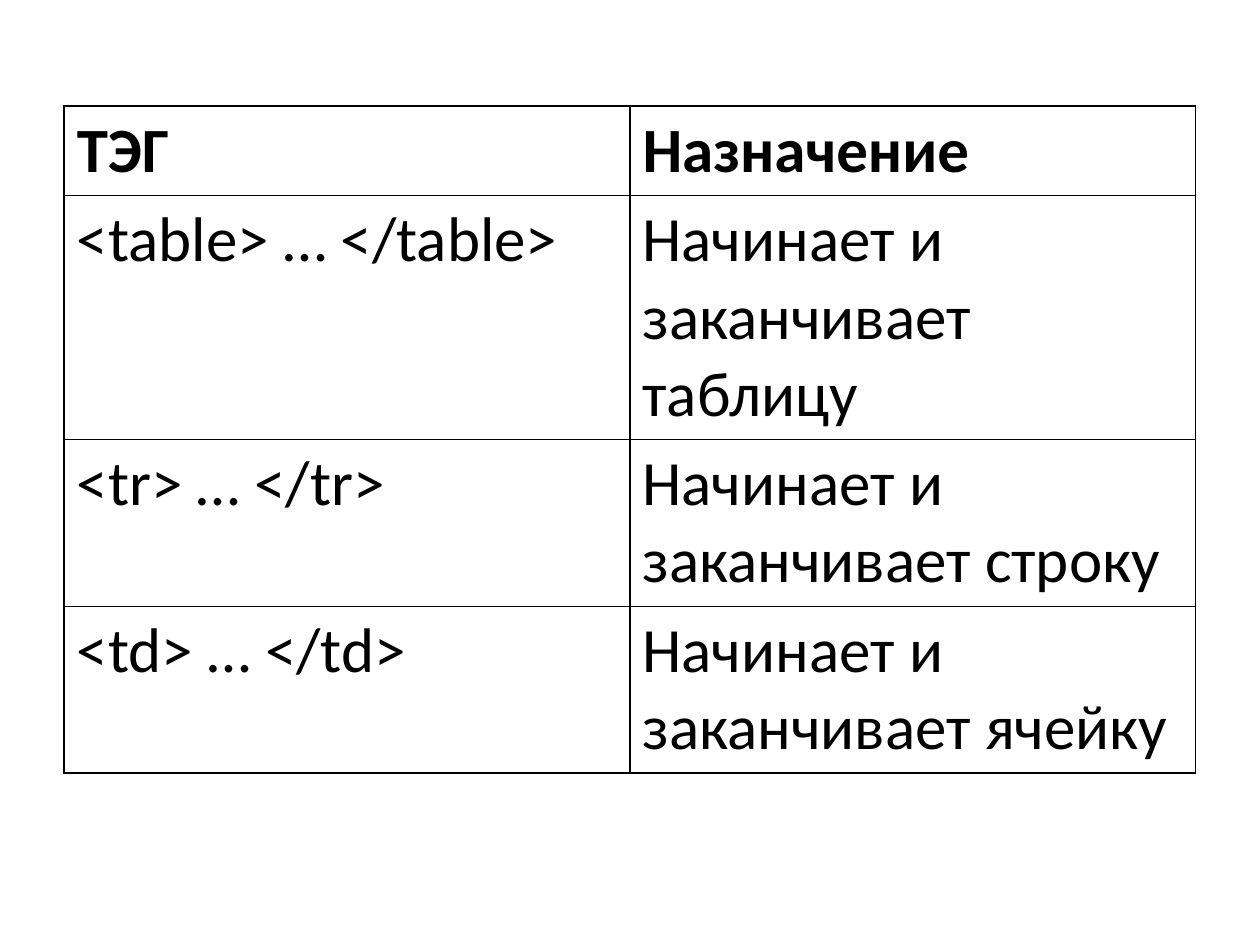
from lxml import etree
from pptx import Presentation
from pptx import util as u
from pptx.dml import color
from pptx.oxml import ns

COLORS = {"text": "000000", "border": "000000", "cell": "FFFFFF"}
ROWS = [
    ("ТЭГ", "Назначение"),
    ("<table> … </table>", "Начинает и заканчивает таблицу"),
    ("<tr> … </tr>", "Начинает и заканчивает строку"),
    ("<td> … </td>", "Начинает и заканчивает ячейку"),
]
ROW_HEIGHTS = [0.7, 1.93, 1.32, 1.32]
COL_WIDTH = 4.49


def rgb(name):
    return color.RGBColor.from_string(COLORS[name])


def add_text(tf, text, size=36, bold=False, font="Calibri", fill="text"):
    r = tf.paragraphs[0].add_run()
    r.text = text
    r.font.name = font
    r.font.size = u.Pt(size)
    r.font.bold = bold
    r.font.color.rgb = rgb(fill)


def style_cell(cell, width=1):
    tc_pr = cell._tc.get_or_add_tcPr()
    for side in ("lnL", "lnR", "lnT", "lnB"):
        ln = etree.SubElement(tc_pr, ns.qn(f"a:{side}"), w=str(u.Pt(width)))
        fill = etree.SubElement(ln, ns.qn("a:solidFill"))
        etree.SubElement(fill, ns.qn("a:srgbClr"), val=COLORS["border"])
    cell.fill.solid()
    cell.fill.fore_color.rgb = rgb("cell")


def add_tag_table(s, left, top):
    cols = len(ROWS[0])
    table = s.shapes.add_table(
        len(ROWS), cols, u.Inches(left), u.Inches(top),
        u.Inches(COL_WIDTH * cols), u.Inches(sum(ROW_HEIGHTS)),
    ).table
    table.horz_banding = False
    for col in table.columns:
        col.width = u.Inches(COL_WIDTH)
    for i, (values, height) in enumerate(zip(ROWS, ROW_HEIGHTS)):
        table.rows[i].height = u.Inches(height)
        for j, value in enumerate(values):
            cell = table.cell(i, j)
            style_cell(cell)
            add_text(cell.text_frame, value, bold=i == 0)


def main():
    prs = Presentation()
    prs.slide_width, prs.slide_height = u.Inches(10), u.Inches(7.5)
    s = prs.slides.add_slide(prs.slide_layouts[6])
    add_tag_table(s, 0.51, 0.84)
    prs.save("out.pptx")


if __name__ == "__main__":
    main()
